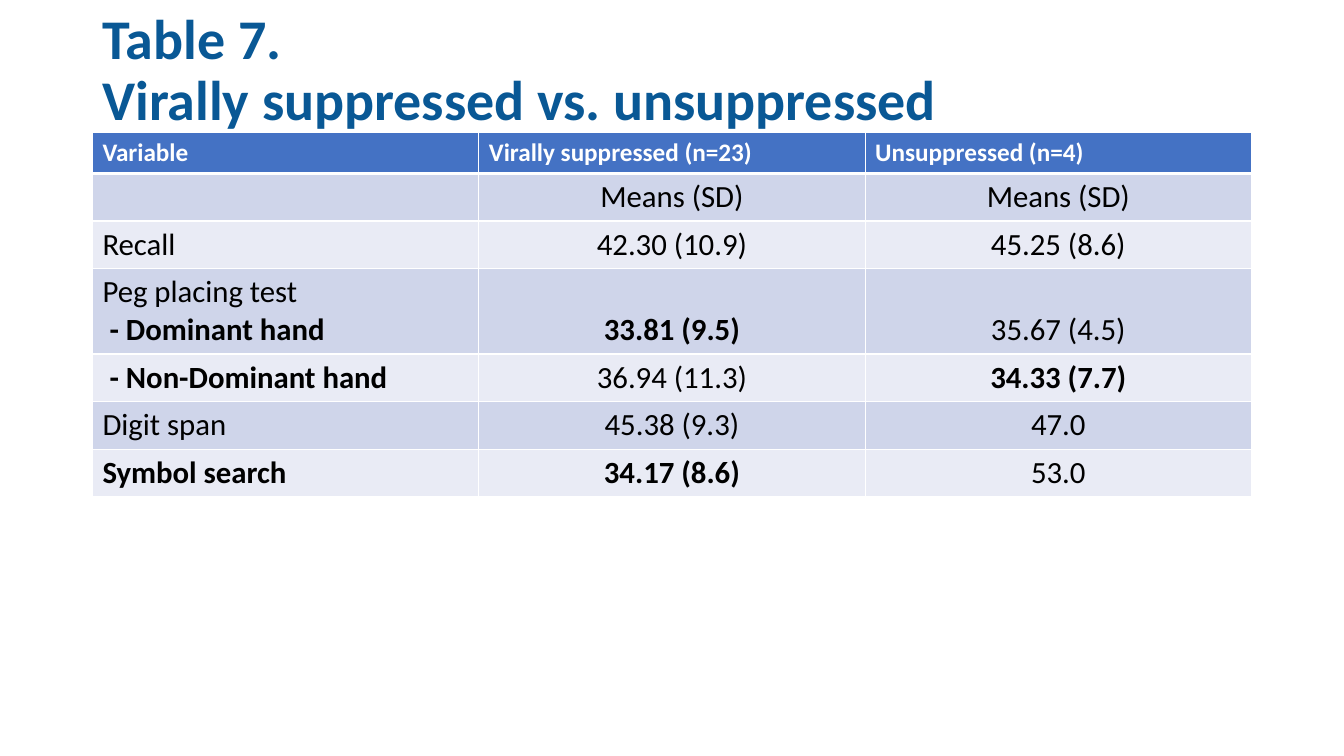
from lxml import etree
from pptx import Presentation
from pptx.dml.color import RGBColor
from pptx.enum.text import MSO_ANCHOR, MSO_AUTO_SIZE, PP_ALIGN
from pptx.oxml.ns import qn
from pptx.util import Cm, Pt

MIDDLE, BOTTOM = MSO_ANCHOR.MIDDLE, MSO_ANCHOR.BOTTOM
LEFT, CENTER = PP_ALIGN.LEFT, PP_ALIGN.CENTER
NO_FIT = MSO_AUTO_SIZE.NONE

FONT = "Calibri"
TITLE = "Table 7. \vVirally suppressed vs. unsuppressed"
HEAD = ["Variable", "Virally suppressed (n=23)", "Unsuppressed (n=4)"]
ROWS = [
    ["", "Means (SD)", "Means (SD)"],
    ["Recall", "42.30 (10.9)", "45.25 (8.6)"],
    ["Peg placing test\n- Dominant hand", "33.81 (9.5)", "35.67 (4.5)"],
    ["- Non-Dominant hand", "36.94 (11.3)", "34.33 (7.7)"],
    ["Digit span", "45.38 (9.3)", "47.0"],
    ["Symbol search", "34.17 (8.6)", "53.0"],
]
BOLD = {"- Dominant hand", "- Non-Dominant hand", "Symbol search",
        "33.81 (9.5)", "34.33 (7.7)", "34.17 (8.6)"}
BANDS = ["CFD5EA", "E9EBF5"]
LEFT_EDGE, WIDTH = Cm(2.33), Cm(29.21)
HEAD_H, LINE_H, PAD = 1.03, 0.95, 0.25


def color(code):
    return RGBColor.from_string(code)


def style(para, size, code, bold):
    font = para.font
    font.name, font.size, font.bold = FONT, Pt(size), bold
    font.color.rgb = color(code)


def edge(cell, head):
    """Draw white cell borders, thicker below the header."""
    props = cell._tc.get_or_add_tcPr()
    for spot, side in enumerate(("lnL", "lnR", "lnT", "lnB")):
        width = 3 if head and side == "lnB" else 1
        line = etree.Element(qn("a:" + side), w=str(Pt(width)))
        fill = etree.SubElement(line, qn("a:solidFill"))
        etree.SubElement(fill, qn("a:srgbClr"), val="FFFFFF")
        props.insert(spot, line)


def fill_cell(cell, text, row, col):
    head = row == 0
    cell.fill.solid()
    cell.fill.fore_color.rgb = color("4472C4" if head else BANDS[(row - 1) % 2])
    edge(cell, head)
    cell.text = text
    if col and not head:
        cell.vertical_anchor = BOTTOM
    for para in cell.text_frame.paragraphs:
        para.alignment = CENTER if col and not head else LEFT
        if para.text.startswith("- "):
            para._p.get_or_add_pPr().set("marL", str(Cm(0.18)))
        if head:
            style(para, 18, "FFFFFF", True)
        else:
            style(para, 22, "000000", para.text in BOLD)


deck = Presentation()
deck.slide_width, deck.slide_height = Cm(33.87), Cm(19.05)
slide = deck.slides.add_slide(deck.slide_layouts[5])

title = slide.shapes.title
title.left, title.top, title.width, title.height = LEFT_EDGE, Cm(0.66), WIDTH, Cm(2.31)
frame = title.text_frame
frame.text = TITLE
frame.word_wrap = True
frame.auto_size = NO_FIT
frame.vertical_anchor = MIDDLE
para = frame.paragraphs[0]
para.alignment = LEFT
para.line_spacing = 0.9
style(para, 40, "095895", True)

grid = [HEAD] + ROWS
heights = [HEAD_H] + [PAD + LINE_H * (row[0].count("\n") + 1) for row in ROWS]
table = slide.shapes.add_table(len(grid), len(HEAD), LEFT_EDGE, Cm(3.34),
                               WIDTH, Cm(sum(heights))).table
for r, (texts, height) in enumerate(zip(grid, heights)):
    table.rows[r].height = Cm(height)
    for c, text in enumerate(texts):
        fill_cell(table.cell(r, c), text, r, c)

deck.save("out.pptx")
